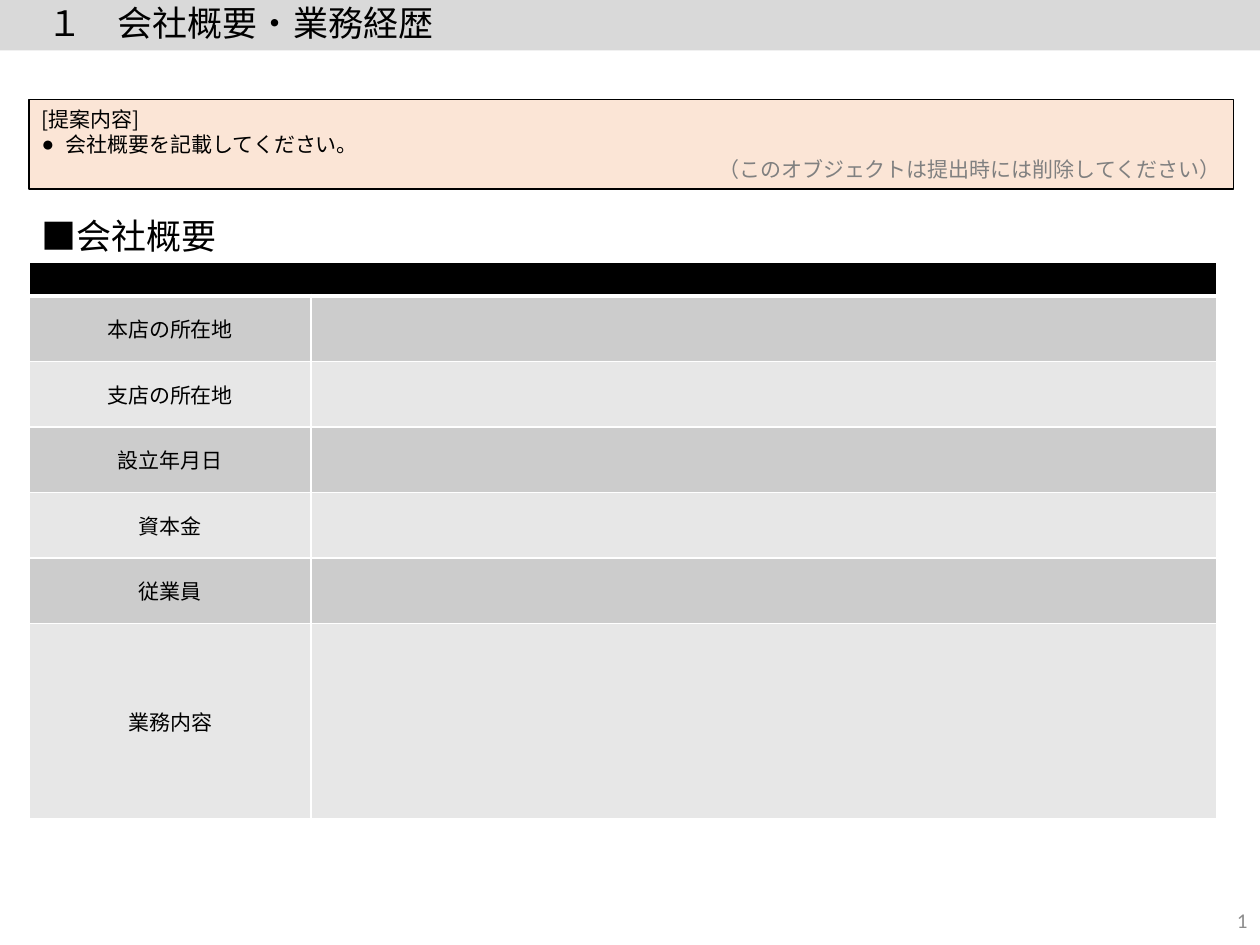
from pptx import Presentation
from pptx.dml.color import RGBColor
from pptx.enum.text import MSO_ANCHOR, MSO_AUTO_SIZE, PP_ALIGN
from pptx.oxml import parse_xml
from pptx.oxml.ns import nsdecls
from pptx.oxml.xmlchemy import OxmlElement
from pptx.util import Inches, Pt

THEME = dict(
    font="Noto Sans CJK JP", num_font="Calibri", heading=20, text=12, empty=10,
    black="000000", white="FFFFFF", bar="D9D9D9", note="FBE5D6",
    hint="808080", number="8C8C8C", bands=("CCCCCC", "E7E7E7"),
)
LEFT = 0.23
LABEL_W, VALUE_W = 2.24, 7.19
ROW_H = 0.52


def rgb(name):
    return RGBColor.from_string(THEME.get(name, name))


def style(p, size, color="black", align=PP_ALIGN.LEFT, before=0, spacing=1.0):
    p.alignment = align
    p.space_before, p.line_spacing = Pt(before), spacing
    for r in p.runs:
        r.font.size, r.font.color.rgb = Pt(THEME[size]), rgb(color)
        r.font.name = THEME["font"]
        ea = OxmlElement("a:ea")
        ea.set("typeface", THEME["font"])
        r.font._element.find(".//{*}latin").addnext(ea)


prs = Presentation()
prs.slide_width, prs.slide_height = Inches(10), Inches(7.5)
s = prs.slides.add_slide(prs.slide_layouts[1])
title, note = s.shapes.title, s.placeholders[1]
heading = s.shapes.add_textbox(0, 0, 0, 0)
number = s.shapes.add_textbox(0, 0, 0, 0)

# Frames: left, top, width, height
for sp, box in (
    (title, (0, 0, 10, 0.4)),
    (note, (LEFT, 0.79, 9.56, 0.71)),
    (heading, (LEFT, 1.69, LABEL_W, 0.4)),
    (number, (7.75, 7.1, 2.25, 0.4)),
):
    sp.left, sp.top, sp.width, sp.height = map(Inches, box)
    tf = sp.text_frame
    tf.word_wrap, tf.auto_size = True, MSO_AUTO_SIZE.NONE
    tf.vertical_anchor = MSO_ANCHOR.MIDDLE

# Title bar and section heading
title.fill.solid()
title.fill.fore_color.rgb = rgb("bar")
for sp, text in ((title, " １ 会社概要・業務経歴".replace(" ", "\u3000")), (heading, "■会社概要")):
    sp.text_frame.text = text
    style(sp.text_frame.paragraphs[0], "heading", before=7.5, spacing=0.9)

# Instruction box
note.fill.solid()
note.fill.fore_color.rgb = rgb("note")
note.line.color.rgb, note.line.width = rgb("black"), Pt(0.75)
note.text_frame.text = "[提案内容]\n会社概要を記載してください。\n（このオブジェクトは提出時には削除してください）"
for p, color, align, bullet in zip(
    note.text_frame.paragraphs,
    ("black", "black", "hint"),
    (PP_ALIGN.LEFT, PP_ALIGN.LEFT, PP_ALIGN.RIGHT),
    (None, "●", None),
):
    style(p, "text", color, align)
    pPr = p._p.get_or_add_pPr()
    indent = Inches(0.19) if bullet else 0
    pPr.set("marL", str(indent))
    pPr.set("indent", str(-indent))
    bu = OxmlElement("a:buChar" if bullet else "a:buNone")
    if bullet:
        bu.set("char", bullet)
    pPr.append(bu)

# Company profile table
labels = ("", "本店の所在地", "支店の所在地", "設立年月日", "資本金", "従業員", "業務内容")
heights = [0.27] + [ROW_H] * 5 + [1.55]
table = s.shapes.add_table(
    len(labels), 2, Inches(LEFT), Inches(2.08),
    Inches(LABEL_W + VALUE_W), Inches(sum(heights)),
).table
for col, width in zip(table.columns, (LABEL_W, VALUE_W)):
    col.width = Inches(width)
table.cell(0, 0).merge(table.cell(0, 1))
for i, (row, height, label) in enumerate(zip(table.rows, heights, labels)):
    row.height = Inches(height)
    for cell, text in zip(row.cells, (label, "")):
        cell.vertical_anchor = MSO_ANCHOR.MIDDLE
        p = cell.text_frame.paragraphs[0]
        if text:
            p.text = text
            style(p, "text", align=PP_ALIGN.CENTER)
        else:
            end = OxmlElement("a:endParaRPr")
            end.set("sz", str(THEME["empty"] * 100))
            p._p.append(end)
        # White borders, thicker around the header's lower edge
        for side in "LRTB":
            thick = (i, side) in ((0, "B"), (1, "T"))
            cell._tc.get_or_add_tcPr().append(parse_xml(
                f'<a:ln{side} {nsdecls("a")} w="{Pt(3 if thick else 1)}"><a:solidFill>'
                f'<a:srgbClr val="{THEME["white"]}"/></a:solidFill></a:ln{side}>'))
        cell.fill.solid()
        cell.fill.fore_color.rgb = rgb(THEME["bands"][(i - 1) % 2] if i else "black")

# Slide number
p = number.text_frame.paragraphs[0]
p.alignment = PP_ALIGN.RIGHT
p._p.append(parse_xml(
    f'<a:fld {nsdecls("a")} id="{{B6F15528-21DE-4FAA-801E-634DDDAF4B2B}}" type="slidenum">'
    f'<a:rPr lang="en-US" sz="{THEME["text"] * 100}"><a:solidFill>'
    f'<a:srgbClr val="{THEME["number"]}"/></a:solidFill>'
    f'<a:latin typeface="{THEME["num_font"]}"/></a:rPr><a:t>1</a:t></a:fld>'))

prs.save("out.pptx")
